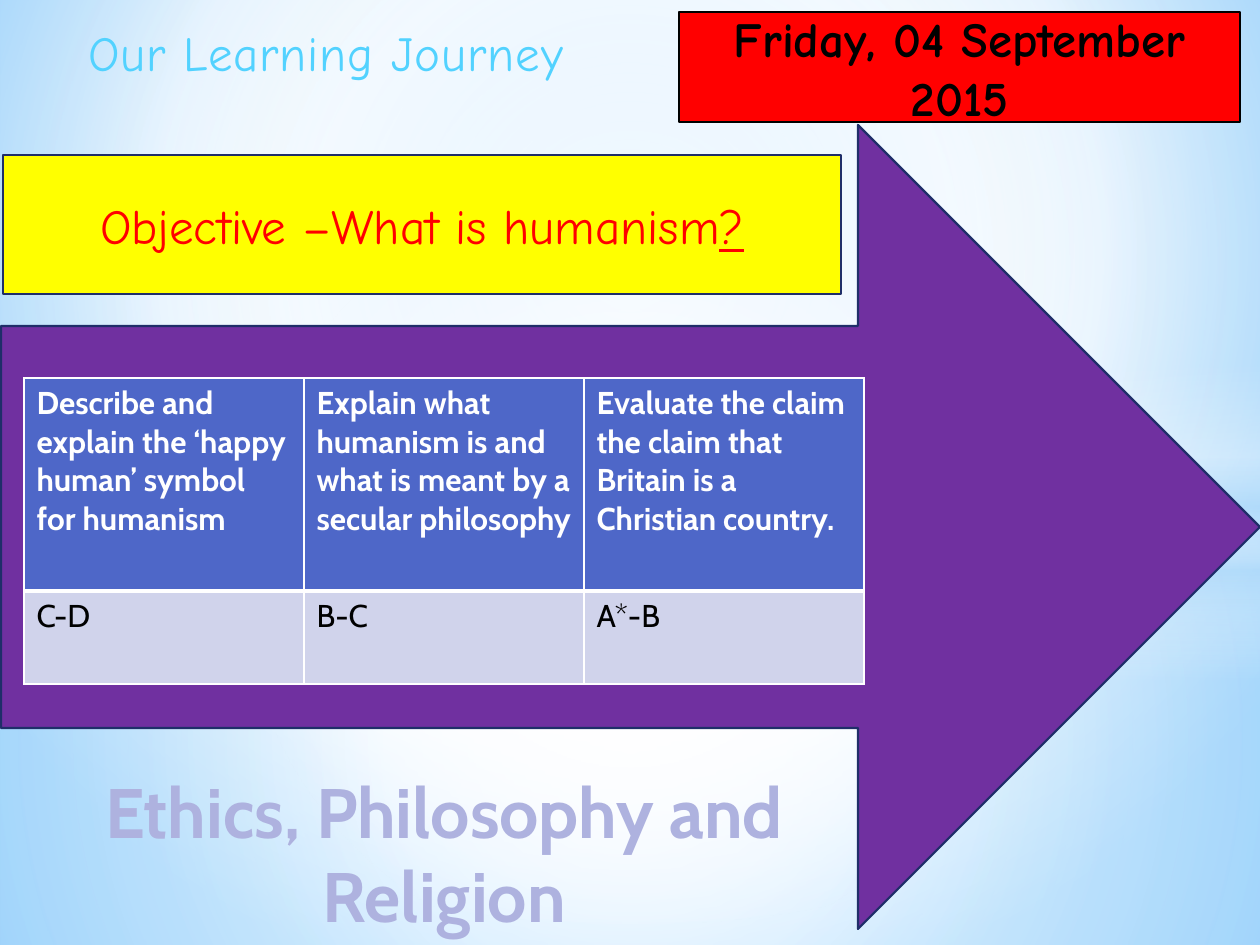
"""Build the learning journey slide on humanism."""
from lxml import etree
from pptx import Presentation
from pptx import util as u
from pptx.dml.color import RGBColor
from pptx.enum import shapes, text
from pptx.oxml.ns import qn

THEME = {
    "hand": "Comic Neue", "body": "Cabin",
    "heading": 28, "banner": 40, "cell": 18,
    "title": "52D2FF", "subject": "AEB2DF", "red": "FF0000", "yellow": "FFFF00",
    "black": "000000", "white": "FFFFFF", "purple": "7030A0", "edge": "1F2E69",
    "head_fill": "4E67C8", "row_fill": "D0D3EB",
}
W, H = 1260, 945
CENTRE = (50, 50, 50, 50)
KIND = shapes.MSO_SHAPE

BACKGROUND = [(0, "9ED5FF", 100), (60, "FFFFFF", 100), (100, "5BB9FF", 100)]
GLOWS = [
    (KIND.RECTANGLE, (0, 533, W, 412), CENTRE,
     [(0, "FFFFFF", 91), (37, "FFFFFF", 76), (100, "B4DCFA", 79)]),
    (KIND.RECTANGLE, (0, 0, W, 533), CENTRE,
     [(0, "FFFFFF", 89), (48, "FFFFFF", 62), (100, "B4DCFA", 79)]),
    (KIND.RECTANGLE, (0, 365, W, 315), None,
     [(0, "FFFFFF", 0), (29, "FFFFFF", 30), (45, "B4DCFA", 40),
      (55, "FFFFFF", 26), (65, "B4DCFA", 60), (100, "FFFFFF", 0)]),
    (KIND.OVAL, (0, 220, W, 703), CENTRE,
     [(0, "FFFFFF", 100), (54, "FFFFFF", 0)]),
]
TITLE = "Our Learning Journey"
DATE = "Friday, 04 September 2015"
OBJECTIVE = ("Objective –What is humanism", "?")
SUBJECT = "Ethics, Philosophy and Religion"
TABLE = [
    ["Describe and explain the ‘happy human’ symbol for humanism",
     "Explain what humanism is and what is meant by a secular philosophy",
     "Evaluate the claim the claim that Britain is a Christian country."],
    ["C-D", "B-C", "A*-B"],
]
ROW_HEIGHTS = (213, 93)
COL_WIDTH = 280


def px(n):
    return u.Emu(round(n * 914400 / 126))


def box(*sides):
    return [px(n) for n in sides]


def rgb(name):
    return RGBColor.from_string(THEME[name])


def sub(parent, tag, **attrs):
    return etree.SubElement(parent, qn(tag), {k: str(v) for k, v in attrs.items()})


def gradient(fill, owner, stops, focus=None):
    fill.solid()
    solid = owner.find(".//" + qn("a:solidFill"))
    grad = etree.Element(qn("a:gradFill"), rotWithShape="1")
    gs_list = sub(grad, "a:gsLst")
    for pos, colour, alpha in stops:
        gs = sub(gs_list, "a:gs", pos=pos * 1000)
        sub(sub(gs, "a:srgbClr", val=colour), "a:alpha", val=alpha * 1000)
    if focus:
        sides = {k: v * 1000 for k, v in zip("ltrb", focus)}
        sub(sub(grad, "a:path", path="circle"), "a:fillToRect", **sides)
    else:
        sub(grad, "a:lin", ang=5400000, scaled=0)
    solid.getparent().replace(solid, grad)


def add_run(p, words, font="body", size="cell", colour="black", bold=False,
            underline=None, spacing=None):
    r = p.add_run()
    r.text = words
    f = r.font
    f.name, f.size, f.bold, f.underline = THEME[font], u.Pt(THEME[size]), bold, underline
    f.color.rgb = rgb(colour)
    if spacing is not None:
        r._r.get_or_add_rPr().set("spc", str(spacing))


def prepare(tf, anchor):
    tf.word_wrap = True
    tf.auto_size = text.MSO_AUTO_SIZE.NONE
    tf.vertical_anchor = anchor
    p = tf.paragraphs[0]
    p.alignment = text.PP_ALIGN.CENTER
    return p


def add_shape(s, kind, place, fill=None, edge=None, width=1.25):
    sp = s.shapes.add_shape(kind, *box(*place))
    sp.shadow.inherit = False
    if fill:
        sp.fill.solid()
        sp.fill.fore_color.rgb = rgb(fill)
    if edge:
        sp.line.color.rgb = rgb(edge)
        sp.line.width = u.Pt(width)
    else:
        sp.line.fill.background()
    return sp


def set_borders(cell, **widths):
    tc_pr = cell._tc.get_or_add_tcPr()
    for i, (side, width) in enumerate(widths.items()):
        ln = etree.Element(qn("a:ln" + side), w=str(u.Pt(width)))
        sub(sub(ln, "a:solidFill"), "a:srgbClr", val=THEME["white"])
        tc_pr.insert(i, ln)


def add_table(s):
    cols = len(TABLE[0])
    frame = s.shapes.add_table(
        len(TABLE), cols, *box(24, 378, COL_WIDTH * cols, sum(ROW_HEIGHTS)))
    table = frame.table
    for col in table.columns:
        col.width = px(COL_WIDTH)
    for i, (row, height) in enumerate(zip(TABLE, ROW_HEIGHTS)):
        head = i == 0
        table.rows[i].height = px(height)
        for j, words in enumerate(row):
            cell = table.cell(i, j)
            cell.fill.solid()
            cell.fill.fore_color.rgb = rgb("head_fill" if head else "row_fill")
            set_borders(cell, L=1, R=1, T=1 if head else 3, B=3 if head else 1)
            add_run(cell.text_frame.paragraphs[0], words, bold=head,
                    colour="white" if head else "black")


def main():
    prs = Presentation()
    prs.slide_width, prs.slide_height = px(W), px(H)
    s = prs.slides.add_slide(prs.slide_layouts[5])
    gradient(s.background.fill, s.element, BACKGROUND, (20, 10, 20, 60))
    for kind, place, focus, stops in GLOWS:
        sp = add_shape(s, kind, place)
        gradient(sp.fill, sp.element, stops, focus)

    middle, top = text.MSO_ANCHOR.MIDDLE, text.MSO_ANCHOR.TOP
    sp = add_shape(s, KIND.RECTANGLE, (679, 12, 561, 110), "red", "black", 0.75)
    add_run(prepare(sp.text_frame, middle), DATE, font="hand", size="heading", bold=True)

    sp = add_shape(s, KIND.RECTANGLE, (3, 155, 838, 139), "yellow", "edge")
    p = prepare(sp.text_frame, middle)
    for words, underline in zip(OBJECTIVE, (None, True)):
        add_run(p, words, font="hand", size="heading", colour="red", underline=underline)

    add_shape(s, KIND.RIGHT_ARROW, (1, 125, 1259, 804), "purple", "edge")

    title = s.shapes.title
    title.left, title.top, title.width, title.height = box(1, 16, 650, 72)
    title.element.getparent().append(title.element)
    add_run(prepare(title.text_frame, top), TITLE, font="hand", size="heading",
            colour="title", spacing=50)

    sp = s.shapes.add_textbox(*box(0, 762, 888, 183))
    add_run(prepare(sp.text_frame, top), SUBJECT, size="banner", colour="subject", bold=True)
    add_table(s)
    prs.save("out.pptx")


if __name__ == "__main__":
    main()
